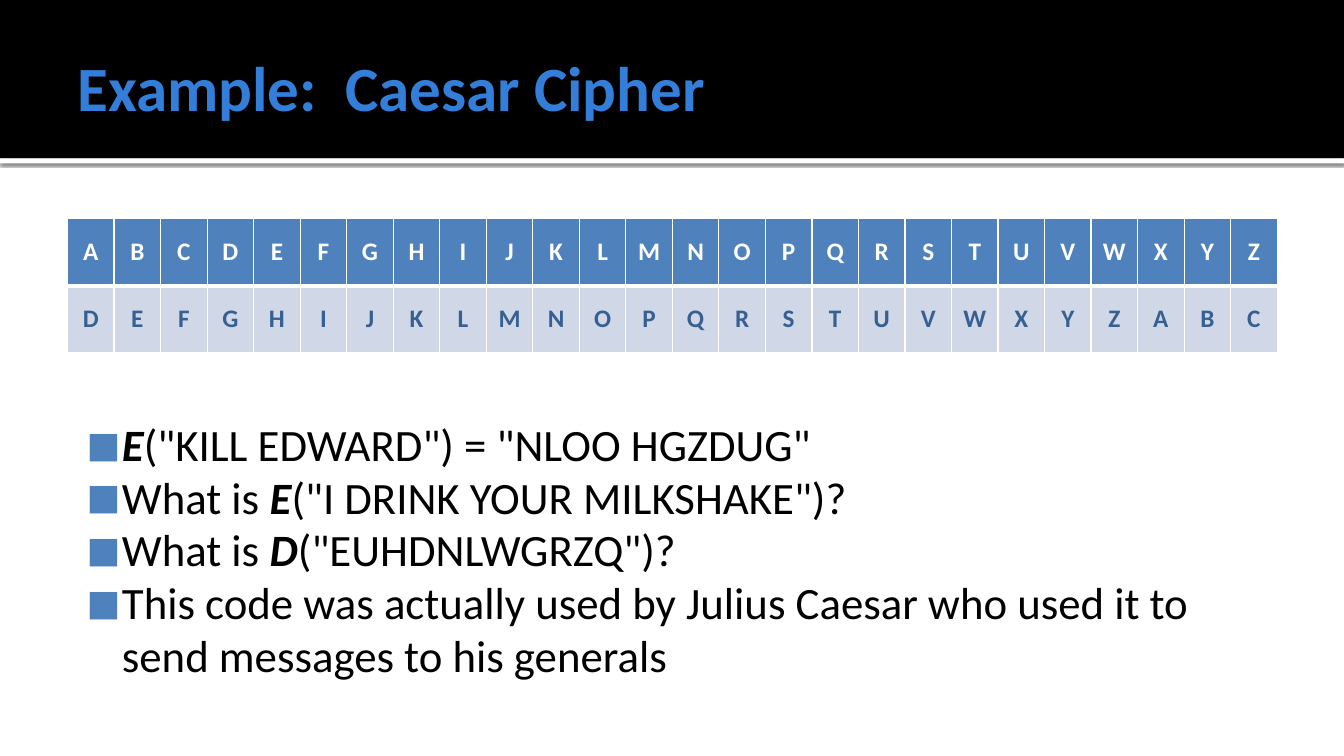
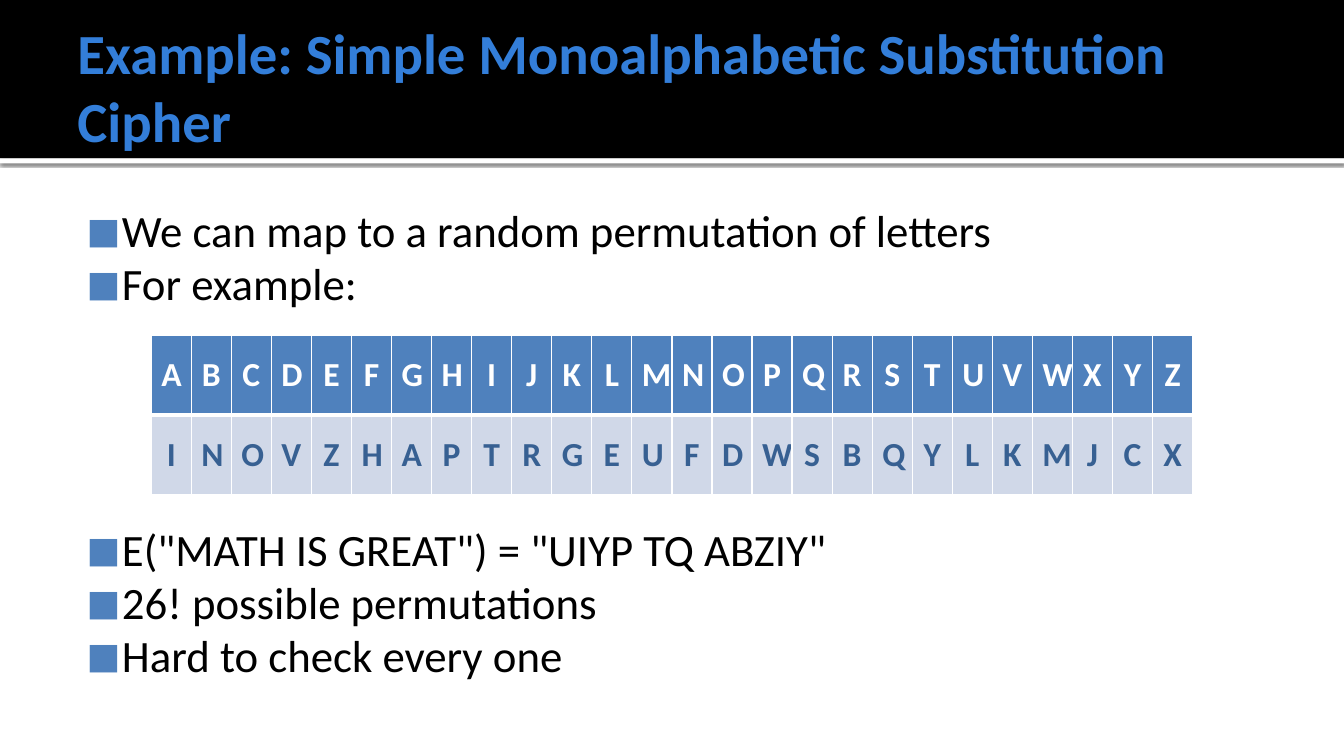
from lxml import etree
from pptx import Presentation
from pptx.dml.color import RGBColor
from pptx.enum.shapes import MSO_SHAPE as Shape
from pptx.enum.text import MSO_ANCHOR as Anchor, PP_ALIGN as Align
from pptx.oxml.ns import nsdecls
from pptx.util import Inches, Pt

BLACK = RGBColor(0x00, 0x00, 0x00)
WHITE = RGBColor(0xFF, 0xFF, 0xFF)
SKY = RGBColor(0x33, 0x7E, 0xD9)
BLUE = RGBColor(0x4F, 0x81, 0xBD)
NAVY = RGBColor(0x37, 0x60, 0x92)
PALE = RGBColor(0xD0, 0xD8, 0xE8)

FONT = "Calibri"
ABC = "ABCDEFGHIJKLMNOPQRSTUVWXYZ"
WIDE = 13.33
LINE = 0.53  # height of one body line

# Each slide: title, grid and body; asterisks enclose function names
SLIDES = [
    {
        "title": "Example:  Caesar Cipher", "size": 45,
        "code": ABC[3:] + ABC[:3],
        "grid": (0.67, 2.17, 12, 1.33), "letter": 18,
        "top": 1.94 + 4 * LINE, "gap": None,
        "body": [
            '*E*("KILL EDWARD") = "NLOO HGZDUG"',
            'What is *E*("I DRINK YOUR MILKSHAKE")?',
            'What is *D*("EUHDNLWGRZQ")?',
            "This code was actually used by Julius Caesar who used it to "
            "send messages to his generals",
        ],
    },
    {
        "title": "Example: Simple Monoalphabetic Substitution Cipher", "size": 40.5,
        "code": "INOVZHAPTRGEUFDWSBQYLKMJCX",
        "grid": (1.5, 3.33, 10.33, 1.58), "letter": 24,
        "top": 1.94, "gap": 2,
        "body": [
            "We can map to a random permutation of letters",
            "For example:",
            'E("MATH IS GREAT") = "UIYP TQ ABZIY"',
            "26! possible permutations",
            "Hard to check every one",
        ],
    },
]


def write(para, text, color, **form):
    run = para.add_run()
    run.text = text
    run.font.color.rgb = color
    for key, val in {"name": FONT, **form}.items():
        setattr(run.font, key, val)


def add_xml(node, *parts):
    for part in parts:
        tag, rest = part.split(" ", 1)
        node.append(etree.fromstring(f"<a:{tag} {nsdecls('a')} {rest}"))


deck = Presentation()
deck.slide_width, deck.slide_height = Inches(WIDE), Inches(7.5)

for page in SLIDES:
    slide = deck.slides.add_slide(deck.slide_layouts[6])
    shapes = slide.shapes

    # Title band with a shadowed white rule below it
    for top, high, color in ((1.57, 0.05, WHITE), (0, 1.57, BLACK)):
        band = shapes.add_shape(Shape.RECTANGLE, 0, Inches(top), Inches(WIDE), Inches(high))
        band.shadow.inherit = False
        band.fill.solid()
        band.fill.fore_color.rgb = color
        band.line.fill.background()
        if color == WHITE:
            add_xml(
                band._element.spPr.find("{*}effectLst"),
                f'outerShdw blurRad="{Pt(2.5)}" dist="{Pt(0.8)}" dir="5400000" rotWithShape="0">'
                '<a:srgbClr val="000000"><a:alpha val="60000"/></a:srgbClr></a:outerShdw>',
            )

    # Title and body frames
    frames = []
    for top, high, pads, anchor in (
        (0.17, 1.37, (0.1, 0.05, 0.05, 0.05), Anchor.MIDDLE),
        (page["top"], 7 - page["top"], (0.06, 0.1, 0.1, 0.05), Anchor.TOP),
    ):
        box = shapes.add_textbox(Inches(0.67), Inches(top), Inches(12), Inches(high))
        frame = box.text_frame
        frame.word_wrap = True
        frame.vertical_anchor = anchor
        for side, pad in zip(("left", "top", "right", "bottom"), pads):
            setattr(frame, f"margin_{side}", Inches(pad))
        frames.append(frame)
    head, body = frames
    write(head.paragraphs[0], page["title"], SKY, size=Pt(page["size"]), bold=True)

    # Bulleted body, leaving room for the grid where needed
    for i, text in enumerate(page["body"]):
        para = body.add_paragraph() if i else body.paragraphs[0]
        para.line_spacing = 0.98
        if i == page["gap"]:
            para.space_before = Inches(4 * LINE)
        props = para._p.get_or_add_pPr()
        props.set("marL", str(Inches(0.48)))
        props.set("indent", str(Inches(-0.35)))
        add_xml(
            props,
            f'buClr ><a:srgbClr val="{BLUE}"/></a:buClr>',
            'buSzPct val="80000"/>',
            f'buFont typeface="{FONT}"/>',
            'buChar char="■"/>',
        )
        for j, part in enumerate(text.split("*")):
            if part:
                name = j % 2 == 1
                write(para, part, BLACK, size=Pt(32), bold=name, italic=name)

    # Cipher grid: plain letters over code letters
    spot = [Inches(n) for n in page["grid"]]
    grid = shapes.add_table(2, len(ABC), *spot).table
    rows = ((ABC, BLUE, WHITE, 1, 3), (page["code"], PALE, NAVY, 3, 1))
    for r, (text, fill, color, above, below) in enumerate(rows):
        for c, letter in enumerate(text):
            cell = grid.cell(r, c)
            cell.vertical_anchor = Anchor.MIDDLE
            para = cell.text_frame.paragraphs[0]
            para.alignment = Align.CENTER
            write(para, letter, color, size=Pt(page["letter"]), bold=True)
            props = cell._tc.get_or_add_tcPr()
            for side, width in (("L", 1), ("R", 1), ("T", above), ("B", below)):
                add_xml(
                    props,
                    f'ln{side} w="{Pt(width)}"><a:solidFill><a:srgbClr val="{WHITE}"/>'
                    f"</a:solidFill></a:ln{side}>",
                )
            cell.fill.solid()
            cell.fill.fore_color.rgb = fill

deck.save("out.pptx")
